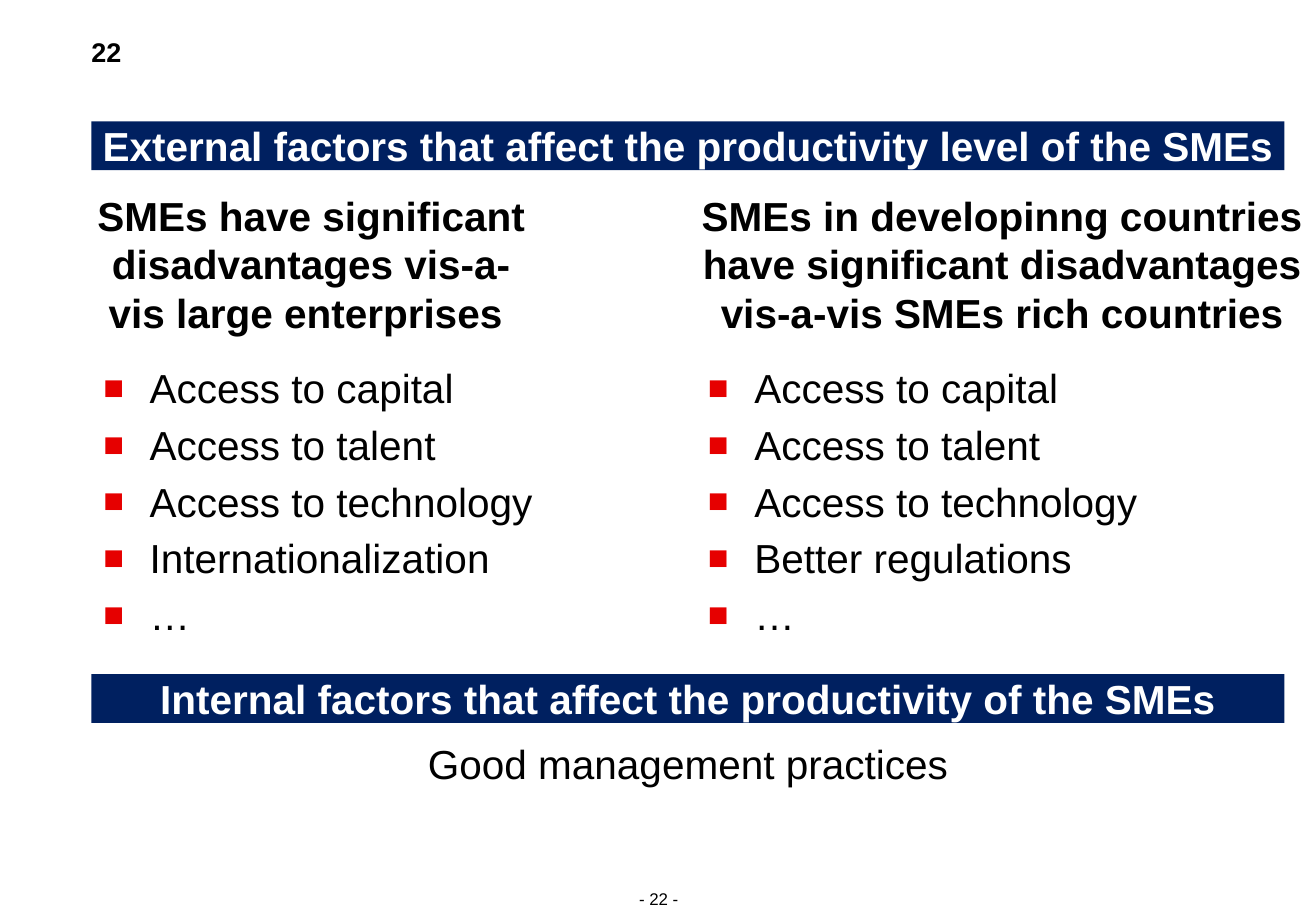
from lxml.etree import SubElement
from pptx import Presentation
from pptx.dml.color import RGBColor
from pptx.enum.shapes import MSO_SHAPE
from pptx.enum.text import MSO_ANCHOR, PP_ALIGN
from pptx.oxml.ns import qn
from pptx.util import Cm, Pt

BLACK = RGBColor(0x00, 0x00, 0x00)
WHITE = RGBColor(0xFF, 0xFF, 0xFF)
NAVY = RGBColor(0x00, 0x20, 0x60)
RED = RGBColor(0xE6, 0x00, 0x00)

LEFT = 1.91
COLUMNS = (LEFT, 14.55)
BANNER_WIDTH = 24.94
LINE_FACTOR = 1.2
INDENT = Cm(0.97)


def add_bullet(paragraph):
    """Give the paragraph a hanging red square bullet."""
    properties = paragraph._p.get_or_add_pPr()
    properties.set("marL", str(INDENT))
    properties.set("indent", str(-INDENT))
    colour = SubElement(properties, qn("a:buClr"))
    SubElement(colour, qn("a:srgbClr"), val=str(RED))
    SubElement(properties, qn("a:buSzPct"), val="85000")
    SubElement(properties, qn("a:buFont"), typeface="Arial")
    SubElement(properties, qn("a:buChar"), char="■")


def write_text(shape, *lines, size=24, bold=False, color=BLACK,
               align=PP_ALIGN.LEFT, bullet=False, inset=(0, 0)):
    """Write one paragraph per line into the shape."""
    frame = shape.text_frame
    frame.word_wrap = True
    frame.vertical_anchor = MSO_ANCHOR.TOP
    frame.margin_left = frame.margin_right = Cm(inset[0])
    frame.margin_top = frame.margin_bottom = Cm(inset[1])
    for index, line in enumerate(lines):
        paragraph = frame.add_paragraph() if index else frame.paragraphs[0]
        paragraph.text = line
        if bullet:
            add_bullet(paragraph)
        paragraph.alignment = align
        paragraph.line_spacing = Pt(size * LINE_FACTOR)
        paragraph.space_before = Pt(size * 0.2 if index else 0)
        paragraph.font.name = "Arial"
        paragraph.font.size = Pt(size)
        paragraph.font.bold = bold
        paragraph.font.color.rgb = color


def add_text(slide, left, top, width, height, *lines, **text_format):
    """Add a text box."""
    box = slide.shapes.add_textbox(Cm(left), Cm(top), Cm(width), Cm(height))
    write_text(box, *lines, **text_format)


def add_banner(slide, top, text):
    """Add a full-width navy heading bar."""
    banner = slide.shapes.add_shape(
        MSO_SHAPE.RECTANGLE, Cm(LEFT), Cm(top), Cm(BANNER_WIDTH), Cm(1.02))
    banner.shadow.inherit = False
    banner.fill.solid()
    banner.fill.fore_color.rgb = NAVY
    banner.line.fill.background()
    write_text(banner, text, bold=True, color=WHITE, align=PP_ALIGN.CENTER)


def add_column(slide, left, width, heading, points):
    """Add a bold heading with its bulleted list."""
    add_text(slide, left, 3.99, width, 3.07, heading,
             bold=True, align=PP_ALIGN.CENTER)
    add_text(slide, left, 7.47, 10.92, 12.22, *points,
             bullet=True, inset=(0.25, 0.13))


def main():
    """Build the slide on SME productivity factors."""
    presentation = Presentation()
    presentation.slide_width = Cm(27.51)
    presentation.slide_height = Cm(19.05)
    slide = presentation.slides.add_slide(presentation.slide_layouts[6])

    add_text(slide, 12.32, 18.59, 2.9, 0.43, "- 22 -",
             size=10, align=PP_ALIGN.CENTER)
    add_text(slide, LEFT, 0.74, 0.8, 0.69, "22", size=16, bold=True)

    add_banner(slide, 2.54,
               "External factors that affect the productivity level of the SMEs")
    shared = ("Access to capital", "Access to talent", "Access to technology")
    add_column(slide, COLUMNS[0], 9.19,
               "SMEs have significant disadvantages vis-a-vis large enterprises ",
               (*shared, "Internationalization", "…"))
    add_column(slide, COLUMNS[1], 12.8,
               "SMEs in developinng countries have significant disadvantages "
               "vis-a-vis SMEs rich countries",
               (*shared, "Better regulations", "…"))

    add_banner(slide, 14.1,
               "Internal factors that affect the productivity of the SMEs")
    add_text(slide, LEFT, 15.32, BANNER_WIDTH, 1.4, "Good management practices",
             align=PP_ALIGN.CENTER, inset=(0.25, 0.13))
    presentation.save("out.pptx")


if __name__ == "__main__":
    main()
